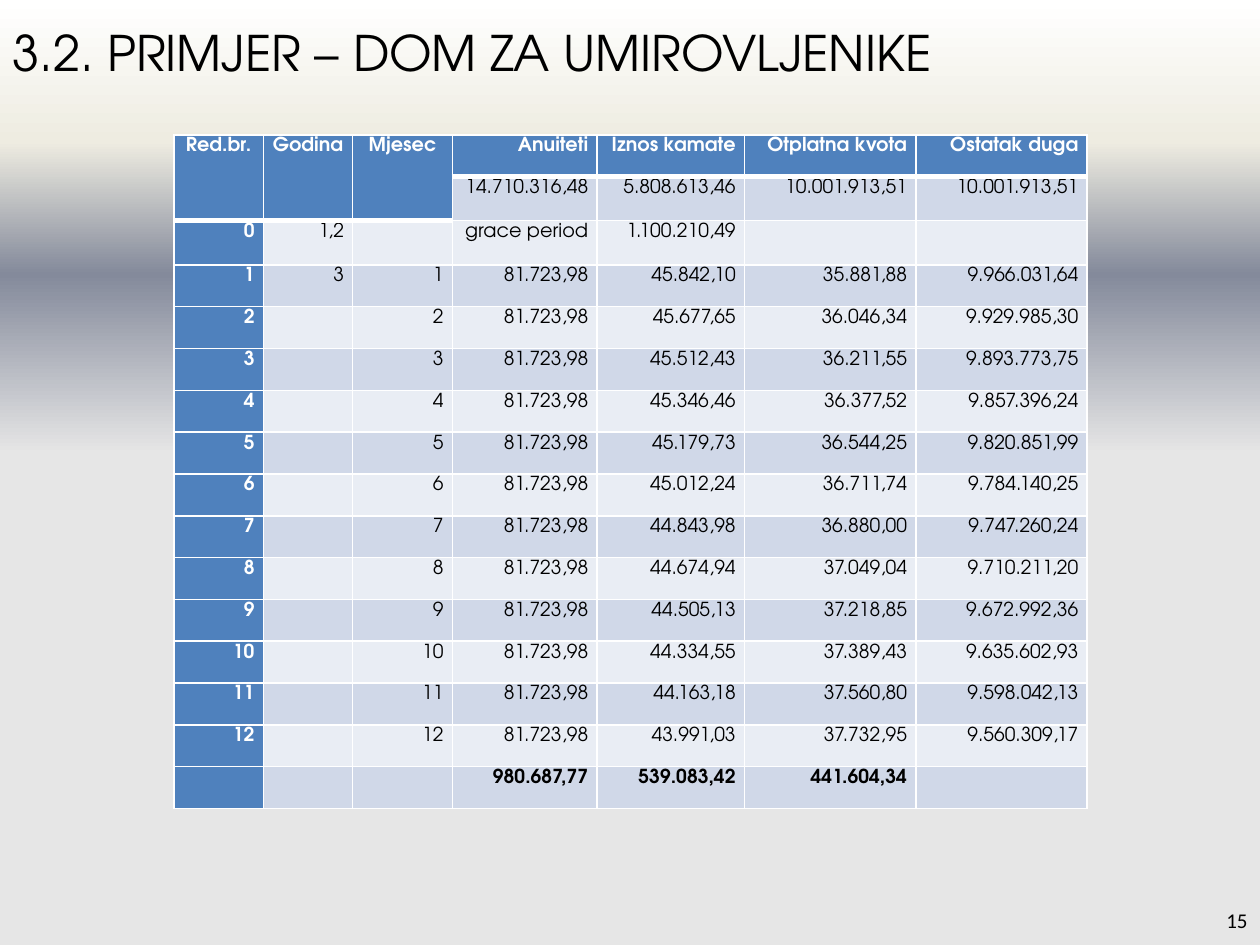
from dataclasses import dataclass

from lxml import etree
from pptx import Presentation
from pptx import util as u
from pptx.dml.color import RGBColor
from pptx.enum import text
from pptx.oxml import ns

WIDTH, HEIGHT = u.Inches(10), u.Inches(7.5)
COLOURS = {
    "white": "FFFFFF",
    "black": "000000",
    "header": "4F81BD",
    "band_dark": "D0D8E8",
    "band_light": "E9EDF4",
    "cream": "EEECE1",
    "slate": "848A9B",
    "grey": "E6E6E6",
}
GRADIENT = [(0, "white"), (15, "cream"), (29, "slate"),
            (48, "grey"), (73, "grey"), (100, "grey")]
TITLE_FONT, NUMBER_FONT = "TeX Gyre Adventor", "Calibri"

COLUMN_SHARES = [7.1, 7.1, 7.9, 11.5, 11.7, 13.6, 13.6]
ROW_SHARES = [4.43, 4.67, 4.67] + [4.43] * 13
MERGED_COLUMNS = 3
ANNUITY = "81.723,98"
INSTALMENTS = [
    ("45.842,10", "35.881,88", "9.966.031,64"),
    ("45.677,65", "36.046,34", "9.929.985,30"),
    ("45.512,43", "36.211,55", "9.893.773,75"),
    ("45.346,46", "36.377,52", "9.857.396,24"),
    ("45.179,73", "36.544,25", "9.820.851,99"),
    ("45.012,24", "36.711,74", "9.784.140,25"),
    ("44.843,98", "36.880,00", "9.747.260,24"),
    ("44.674,94", "37.049,04", "9.710.211,20"),
    ("44.505,13", "37.218,85", "9.672.992,36"),
    ("44.334,55", "37.389,43", "9.635.602,93"),
    ("44.163,18", "37.560,80", "9.598.042,13"),
    ("43.991,03", "37.732,95", "9.560.309,17"),
]
ROWS = [
    ("Red.br.", "Godina", "Mjesec", "Anuiteti", "Iznos kamate",
     "Otplatna kvota", "Ostatak duga"),
    ("", "", "", "14.710.316,48", "5.808.613,46", "10.001.913,51", "10.001.913,51"),
    ("0", "1,2", "", "grace period", "1.100.210,49", "", ""),
    *[(str(month), "3" if month == 1 else "", str(month), ANNUITY, *amounts)
      for month, amounts in enumerate(INSTALMENTS, 1)],
    ("", "", "", "980.687,77", "539.083,42", "441.604,34", ""),
]


@dataclass
class Label:
    words: str
    left: float
    top: float
    width: float
    height: float
    font: str
    size: int
    align: text.PP_ALIGN


LABELS = [
    Label("15", 94.8, 94.67, 5.2, 5.33, NUMBER_FONT, 12, text.PP_ALIGN.RIGHT),
    Label("3.2. PRIMJER – DOM ZA UMIROVLJENIKE", 0, -2.8, 98.8, 16.67,
          TITLE_FONT, 28, text.PP_ALIGN.LEFT),
]


def across(share: float) -> int:
    return round(WIDTH * share / 100)


def down(share: float) -> int:
    return round(HEIGHT * share / 100)


def add_child(parent, tag: str, **attributes):
    return etree.SubElement(parent, ns.qn(tag), attributes)


def style_runs(para, font: str, size: int, colour: str, bold: bool = False) -> None:
    for span in para.runs:
        span.font.name = font
        span.font.size = u.Pt(size)
        span.font.bold = bold
        span.font.color.rgb = RGBColor.from_string(COLOURS[colour])


def paint_background(page) -> None:
    fill = page.background.fill
    fill.gradient()
    fill.gradient_angle = 270
    stops = next(page.background._cSld.iter(ns.qn("a:gsLst")))
    for stop in list(stops):
        stops.remove(stop)
    for position, colour in GRADIENT:
        stop = add_child(stops, "a:gs", pos=str(position * 1000))
        add_child(stop, "a:srgbClr", val=COLOURS[colour])


def add_label(page, label: Label) -> None:
    box = page.shapes.add_textbox(across(label.left), down(label.top),
                                  across(label.width), down(label.height))
    frame = box.text_frame
    frame.word_wrap = True
    frame.vertical_anchor = text.MSO_ANCHOR.MIDDLE
    frame.text = label.words
    para = frame.paragraphs[0]
    para.alignment = label.align
    style_runs(para, label.font, label.size, "black")


def draw_borders(cell, row: int, column: int) -> None:
    header_edge = 2 if column < MERGED_COLUMNS else 1
    widths = {"L": 1, "R": 1,
              "T": 3 if row == header_edge else 1,
              "B": 3 if row + 1 == header_edge else 1}
    properties = cell._tc.get_or_add_tcPr()
    for side, width in widths.items():
        line = add_child(properties, f"a:ln{side}", w=str(u.Pt(width)))
        solid = add_child(line, "a:solidFill")
        add_child(solid, "a:srgbClr", val=COLOURS["white"])


def fill_cell(cell, words: str, row: int, column: int) -> None:
    is_header = row == 0 or column == 0 or (row == 1 and column < MERGED_COLUMNS)
    band = "band_dark" if row % 2 else "band_light"
    draw_borders(cell, row, column)
    cell.fill.solid()
    cell.fill.fore_color.rgb = RGBColor.from_string(
        COLOURS["header" if is_header else band])
    cell.margin_left = cell.margin_right = u.Inches(0.07)
    cell.margin_top = cell.margin_bottom = 0
    if not words:
        return
    cell.text_frame.text = words
    para = cell.text_frame.paragraphs[0]
    centred = row == 0 and column < MERGED_COLUMNS
    para.alignment = text.PP_ALIGN.CENTER if centred else text.PP_ALIGN.RIGHT
    para.line_spacing = 1.15
    para.space_after = u.Pt(10)
    style_runs(para, TITLE_FONT, 11, "white" if is_header else "black",
               is_header or row == len(ROWS) - 1)


def add_repayment_table(page) -> None:
    table = page.shapes.add_table(
        len(ROWS), len(COLUMN_SHARES), across(13.8), down(14.27),
        across(sum(COLUMN_SHARES)), down(sum(ROW_SHARES))).table
    table.first_col = True
    for column, share in zip(table.columns, COLUMN_SHARES):
        column.width = across(share)
    for row, share in zip(table.rows, ROW_SHARES):
        row.height = down(share)
    for row, values in enumerate(ROWS):
        for column, words in enumerate(values):
            fill_cell(table.cell(row, column), words, row, column)
    for column in range(MERGED_COLUMNS):
        table.cell(0, column).merge(table.cell(1, column))


def main() -> None:
    deck = Presentation()
    deck.slide_width, deck.slide_height = WIDTH, HEIGHT
    page = deck.slides.add_slide(deck.slide_layouts[6])
    paint_background(page)
    for label in LABELS:
        add_label(page, label)
    add_repayment_table(page)
    deck.save("out.pptx")


if __name__ == "__main__":
    main()
